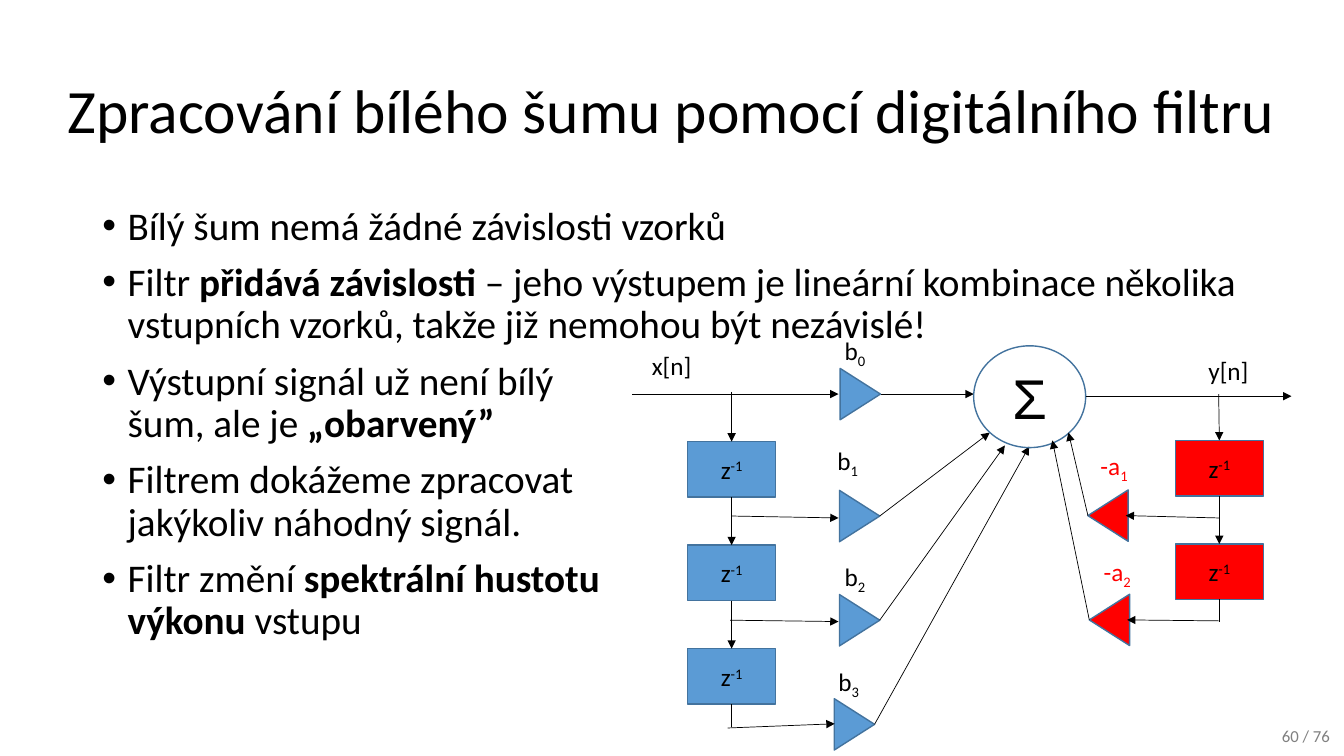
from dataclasses import dataclass

from lxml import etree
from pptx import Presentation
from pptx.dml.color import RGBColor
from pptx.enum import shapes, text
from pptx.oxml import ns
from pptx.util import Pt


@dataclass(frozen=True)
class Theme:
    font: str = "Calibri"
    symbol_font: str = "Arial"
    ink: RGBColor = RGBColor(0, 0, 0)
    muted: RGBColor = RGBColor(0x80, 0x80, 0x80)
    forward: RGBColor = RGBColor(0x5B, 0x9B, 0xD5)
    feedback: RGBColor = RGBColor(0xFF, 0, 0)
    outline: RGBColor = RGBColor(0x43, 0x73, 0x9E)
    title: int = 44
    body: int = 28
    sigma: int = 40
    label: int = 18
    footer: int = 12


T = Theme()
KIND = shapes.MSO_SHAPE
ALIGN = text.PP_ALIGN
DELAY_W, DELAY_H = 63, 39.6
GAIN_W, GAIN_H = 36.7, 28.8
PITCH = 74

BULLETS = [
    [("Bílý šum nemá žádné závislosti vzorků", False)],
    [("Filtr ", False), ("přidává závislosti ", True),
     ("– jeho výstupem je lineární kombinace několika vstupních vzorků, "
      "takže již nemohou být nezávislé!", False)],
    [("Výstupní signál už není bílý\nšum, ale je ", False), ("„obarvený”", True)],
    [("Filtrem dokážeme zpracovat\njakýkoliv náhodný signál.", False)],
    [("Filtr změní ", False), ("spektrální hustotu\nvýkonu ", True), ("vstupu", False)],
]


def place(sp, box):
    sp.left, sp.top, sp.width, sp.height = map(Pt, box)


def style(p, size, color=T.ink, align=None, font=T.font):
    p.font.name, p.font.size, p.font.color.rgb = font, Pt(size), color
    p.alignment = align


def add_run(p, words, bold=None, baseline=None):
    for i, line in enumerate(words.split("\n")):
        if i:
            p.add_line_break()
        r = p.add_run()
        r.text = line
        r.font.bold = bold
        if baseline:
            r._r.get_or_add_rPr().set("baseline", str(baseline))


def add_label(s, x, y, w, words, sub="", color=T.ink):
    sp = s.shapes.add_textbox(Pt(x), Pt(y), Pt(w), Pt(29))
    sp.text_frame.word_wrap = True
    p = sp.text_frame.paragraphs[0]
    style(p, T.label, color)
    add_run(p, words)
    if sub:
        add_run(p, sub, baseline=-25000)


def add_block(s, kind, box, fill=None):
    sp = s.shapes.add_shape(kind, *map(Pt, box))
    sp.shadow.inherit = False
    if fill is None:
        sp.fill.background()
    else:
        sp.fill.solid()
        sp.fill.fore_color.rgb = fill
    sp.line.color.rgb, sp.line.width = T.outline, Pt(1)
    sp.text_frame.vertical_anchor = text.MSO_ANCHOR.MIDDLE
    return sp


def add_line(s, x1, y1, x2, y2, arrow=True):
    c = s.shapes.add_connector(shapes.MSO_CONNECTOR.STRAIGHT, Pt(x1), Pt(y1), Pt(x2), Pt(y2))
    c.line.color.rgb, c.line.width = T.ink, Pt(0.5)
    if arrow:
        etree.SubElement(c.line._get_or_add_ln(), ns.qn("a:tailEnd"), type="triangle")
    etree.SubElement(c._element.spPr, ns.qn("a:effectLst"))
    return c


def add_gain(s, cx, cy, fill, rotation):
    sp = add_block(s, KIND.FLOWCHART_EXTRACT,
                   (cx - GAIN_W / 2, cy - GAIN_H / 2, GAIN_W, GAIN_H), fill)
    sp.rotation = rotation


def add_delays(s, x, y, count, fill, feed):
    """Column of delay blocks, fed from the given point and joined downwards."""
    above = None
    for i in range(count):
        top = y + i * PITCH
        sp = add_block(s, KIND.RECTANGLE, (x, top, DELAY_W, DELAY_H), fill)
        p = sp.text_frame.paragraphs[0]
        style(p, T.label, align=ALIGN.CENTER)
        add_run(p, "z")
        add_run(p, "-1", baseline=30000)
        link = add_line(s, *feed, x + DELAY_W / 2, top)
        if above is not None:
            link.begin_connect(above, 2)
        link.end_connect(sp, 0)
        above = sp
    end = y + (count - 1) * PITCH + DELAY_H
    add_line(s, x + DELAY_W / 2, end, x + DELAY_W / 2, end + 16, arrow=False)


def add_title(s, box):
    sp = s.shapes.title
    place(sp, box)
    tf = sp.text_frame
    tf.auto_size = text.MSO_AUTO_SIZE.NONE
    tf.vertical_anchor = text.MSO_ANCHOR.MIDDLE
    p = tf.paragraphs[0]
    style(p, T.title, align=ALIGN.CENTER)
    p.line_spacing = 0.9
    add_run(p, "Zpracování bílého šumu pomocí digitálního filtru")


def add_body(s, box):
    sp = s.placeholders[1]
    place(sp, box)
    tf = sp.text_frame
    tf.auto_size = text.MSO_AUTO_SIZE.NONE
    for i, runs in enumerate(BULLETS):
        p = tf.add_paragraph() if i else tf.paragraphs[0]
        style(p, T.body)
        p.line_spacing, p.space_before = 0.9, Pt(10)
        pPr = p._p.get_or_add_pPr()
        pPr.set("marL", str(Pt(18)))
        pPr.set("indent", str(-Pt(18)))
        for words, bold in runs:
            add_run(p, words, bold)


def add_forward(s, x, y):
    """Input side: delays, gains b0 to b3 and arrows to the sum."""
    add_label(s, x + 7, y + 11, 66, "x[n]")
    add_line(s, x, y + 45.5, x + 147.5, y + 45.5)
    add_line(s, x + 178, y + 45.5, x + 244, y + 45.5)
    add_delays(s, x + 39.6, y + 79.4, 3, T.forward, (x + 71.1, y + 44))
    # Gain centre, label corner
    gains = [(163, 45.5, 144.7, 0), (162.5, 132.6, 139.6, 78.6),
             (162.5, 207, 144.7, 161.4), (158.8, 281.4, 140.3, 236.3)]
    for i, (cx, cy, lx, ly) in enumerate(gains):
        add_gain(s, x + cx, y + cy, T.forward, 90)
        add_label(s, x + lx, y + ly, 32.4, "b", str(i))
    # Tap start, tap end, meeting point on the sum
    taps = [(71, 132.6, 147.5, 134, 255.5, 73), (70, 207, 147.5, 208, 266.3, 82.2),
            (68.3, 284, 144.7, 281, 283.6, 83)]
    for (cx, cy, *_), (x1, y1, x2, y2, sx, sy) in zip(gains[1:], taps):
        add_line(s, x + x1, y + y1, x + x2, y + y2)
        add_line(s, x + cx + GAIN_H / 2, y + cy, x + sx, y + sy)


def add_feedback(s, x, y):
    """Output side: delays, gains -a1 and -a2 and arrows to the sum."""
    add_label(s, x + 404.6, y + 14.5, 66, "y[n]")
    add_line(s, x + 324, y + 47, x + 471, y + 47)
    add_delays(s, x + 388, y + 78.6, 2, T.feedback, (x + 419, y + 45.5))
    # Gain centre, label corner, tap start height, meeting point on the sum
    gains = [(340, 132.3, 327.5, 82.2, 134, 311.7, 73),
             (341, 206.8, 329.7, 157.8, 207.5, 300.2, 78.6)]
    for i, (cx, cy, lx, ly, tap, sx, sy) in enumerate(gains, 1):
        add_gain(s, x + cx, y + cy, T.feedback, 270)
        add_label(s, x + lx, y + ly, 39.6, "-a", str(i), T.feedback)
        add_line(s, x + 419.5, y + tap, x + cx + 12.6, y + cy)
        add_line(s, x + cx - GAIN_H / 2, y + cy, x + sx, y + sy)


def add_filter(s, x, y):
    add_forward(s, x, y)
    total = add_block(s, KIND.OVAL, (x + 244, y + 11, 80, 72.7))
    p = total.text_frame.paragraphs[0]
    style(p, T.sigma, align=ALIGN.CENTER, font=T.symbol_font)
    add_run(p, "Σ")
    add_feedback(s, x, y)


def add_page_number(s, box):
    sp = s.shapes.add_textbox(*map(Pt, box))
    sp.text_frame.word_wrap = True
    p = sp.text_frame.paragraphs[0]
    style(p, T.footer, T.muted, ALIGN.RIGHT)
    add_run(p, "60 / 76")


def main():
    prs = Presentation()
    prs.slide_width, prs.slide_height = Pt(960), Pt(540)
    s = prs.slides.add_slide(prs.slide_layouts[1])
    add_title(s, (0, 28.8, 960, 104.4))
    add_body(s, (66, 143.75, 828, 342.6))
    add_filter(s, 451.5, 236)
    add_page_number(s, (894.5, 515, 62.5, 23.8))
    prs.save("out.pptx")


if __name__ == "__main__":
    main()
